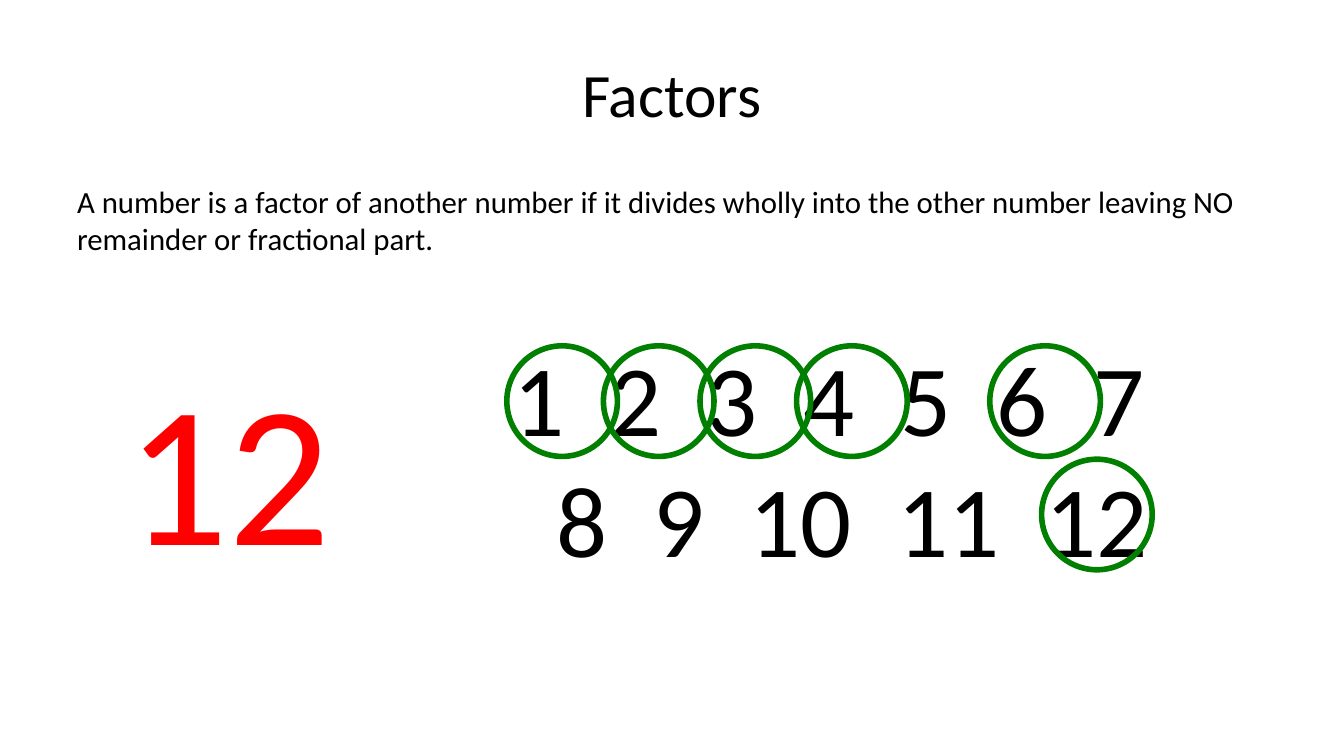
from dataclasses import dataclass

from pptx import Presentation
from pptx.dml.color import RGBColor
from pptx.enum.shapes import MSO_SHAPE
from pptx.enum.text import MSO_ANCHOR, PP_ALIGN
from pptx.util import Pt

OVAL = MSO_SHAPE.OVAL
TOP, MIDDLE = MSO_ANCHOR.TOP, MSO_ANCHOR.MIDDLE
LEFT, CENTER = PP_ALIGN.LEFT, PP_ALIGN.CENTER
TITLE_ONLY = 5


@dataclass(frozen=True)
class Theme:
    font: str = "Calibri"
    ink: RGBColor = RGBColor(0x00, 0x00, 0x00)
    target: RGBColor = RGBColor(0xFF, 0x00, 0x00)
    ring: RGBColor = RGBColor(0x00, 0x7F, 0x00)
    title_size: int = 44
    body_size: int = 22
    number_size: int = 72
    target_size: int = 144


THEME = Theme()
NUMBER_ROWS = [range(1, 8), range(8, 13)]
NUMBER_GAP = 16.25  # widening of the space between two numbers
RING_SIZE = 79
RING_PITCH = 69
FIRST_ROW_FACTORS = [1, 2, 3, 4, 6]


def place(shape, box):
    for name, value in zip(("left", "top", "width", "height"), box):
        setattr(shape, name, Pt(value))


def add_run(paragraph, text, size, color=THEME.ink):
    run = paragraph.add_run()
    run.text = text
    for name, value in {"name": THEME.font, "size": Pt(size)}.items():
        setattr(run.font, name, value)
    run.font.color.rgb = color
    return run


def format_frame(shape, anchor, alignment):
    """Set wrapping and anchor, and return the first paragraph."""
    frame = shape.text_frame
    for name, value in {"word_wrap": True, "vertical_anchor": anchor}.items():
        setattr(frame, name, value)
    paragraph = frame.paragraphs[0]
    paragraph.alignment = alignment
    return paragraph


def add_text_box(slide, box, anchor, alignment):
    shape = slide.shapes.add_textbox(*map(Pt, box))
    return format_frame(shape, anchor, alignment)


def fill_title(slide, box):
    title = slide.shapes.title
    place(title, box)
    add_run(format_frame(title, MIDDLE, CENTER), "Factors", THEME.title_size)


def add_definition(slide, box):
    paragraph = add_text_box(slide, box, TOP, LEFT)
    add_run(paragraph, "A number is a factor of another number if it divides wholly "
            "into the other number leaving NO remainder or fractional part.",
            THEME.body_size)


def add_target(slide, box):
    paragraph = add_text_box(slide, box, MIDDLE, CENTER)
    add_run(paragraph, "12", THEME.target_size, THEME.target)


def add_ring(slide, left, top):
    ring = slide.shapes.add_shape(OVAL, Pt(left), Pt(top), Pt(RING_SIZE), Pt(RING_SIZE))
    ring.shadow.inherit = False
    ring.fill.background()
    ring.line.color.rgb = THEME.ring
    ring.line.width = Pt(4)


def add_candidates(slide, box):
    """Write the numbers to test and ring those that are factors."""
    left, top, _, _ = box
    paragraph = add_text_box(slide, box, MIDDLE, CENTER)
    last_number = NUMBER_ROWS[-1][-1]
    for row_index, row in enumerate(NUMBER_ROWS):
        if row_index:
            paragraph.add_line_break()
        for number in row:
            add_run(paragraph, str(number), THEME.number_size)
            if number != last_number:
                gap = add_run(paragraph, " ", THEME.number_size)
                gap.font._element.set("spc", str(round(NUMBER_GAP * 100)))

    # Rings: one column per number in the first row, then the last number
    for factor in FIRST_ROW_FACTORS:
        add_ring(slide, left + 57 + (factor - 1) * RING_PITCH, top + 13)
    add_ring(slide, left + 439, top + 94)


def build_factors_slide(presentation):
    slide = presentation.slides.add_slide(presentation.slide_layouts[TITLE_ONLY])
    for placeholder in list(slide.placeholders):
        if placeholder != slide.shapes.title:
            placeholder.element.getparent().remove(placeholder.element)
    fill_title(slide, (48, 21.6, 864, 90))
    add_definition(slide, (48, 126.7, 864, 60))
    add_target(slide, (56, 234, 214.5, 196))
    add_candidates(slide, (305, 234, 607, 184.5))


def main():
    presentation = Presentation()
    presentation.slide_width, presentation.slide_height = Pt(960), Pt(540)
    build_factors_slide(presentation)
    presentation.save("out.pptx")


if __name__ == "__main__":
    main()
